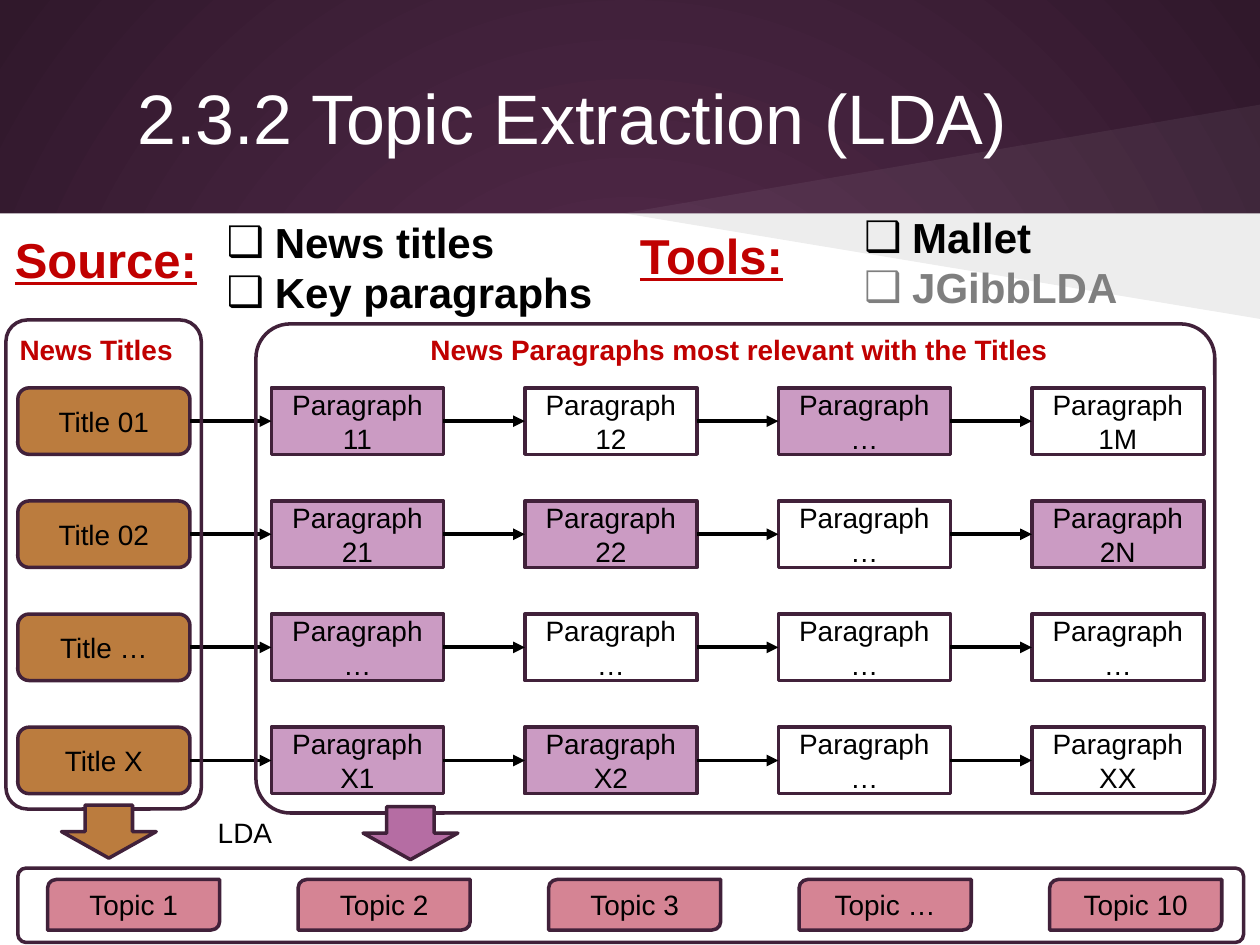
from lxml import etree
from pptx import Presentation
from pptx.dml.color import RGBColor
from pptx.enum import shapes, text
from pptx.oxml import ns
from pptx.util import Cm, Pt

COLORS = {
    "glow": "592D50", "night": "30182B", "outline": "41213A",
    "white": "FFFFFF", "black": "000000", "grey": "7F7F7F", "red": "C00000",
    "title": "BB7C3E", "paragraph": "CB9BC3", "topic": "D58494",
    "arrow": "B56DA3",
}
SHAPE = shapes.MSO_SHAPE
CENTER = text.PP_ALIGN.CENTER

# Grid of titles and paragraphs, in cm
LEFT, TOP, COLUMN_STEP, ROW_STEP = 0.36, 7.82, 5.11, 2.28
BOX_W, BOX_H = 3.47, 1.34
# Each row: title, paragraph suffixes, columns of the relevant paragraphs
ROWS = [
    ("Title 01", ["11", "12", "…", "1M"], {1, 3}),
    ("Title 02", ["21", "22", "…", "2N"], {1, 2, 4}),
    ("Title …", ["…", "…", "…", "…"], {1}),
    ("Title X", ["X1", "X2", "…", "XX"], {1, 2}),
]
TOPICS = ["Topic 1", "Topic 2", "Topic 3", "Topic …", "Topic 10"]


def rgb(name):
    return RGBColor.from_string(COLORS[name])


def add_xml(parent, tag, **attributes):
    return etree.SubElement(parent, ns.qn(tag), **attributes)


def add_bullet(paragraph, color):
    properties = paragraph._p.get_or_add_pPr()
    properties.set("marL", str(Cm(0.97)))
    properties.set("indent", str(-Cm(0.97)))
    add_xml(add_xml(properties, "a:buClr"), "a:srgbClr", val=COLORS[color])
    add_xml(properties, "a:buFont", typeface="Arial")
    add_xml(properties, "a:buChar", char="❑")


def write(frame, content, size=16, color="black", bold=False, underline=False,
          align=None, anchor=text.MSO_ANCHOR.TOP, bullet=False, indent=0):
    """Write content into frame: a string, or a list of (string, color)."""
    frame.word_wrap = True
    frame.vertical_anchor = anchor
    lines = [(content, color)] if isinstance(content, str) else content
    for index, (line, line_color) in enumerate(lines):
        paragraph = frame.add_paragraph() if index else frame.paragraphs[0]
        paragraph.alignment = align
        if bullet:
            add_bullet(paragraph, line_color)
        if indent:
            paragraph._p.get_or_add_pPr().set("indent", str(Cm(indent)))
        run = paragraph.add_run()
        run.text = line
        run.font.name = "Arial"
        run.font.size = Pt(size)
        run.font.bold = bold
        run.font.underline = underline
        run.font.color.rgb = rgb(line_color)


def add_label(slide, box, content, **style):
    label = slide.shapes.add_textbox(*map(Cm, box))
    write(label.text_frame, content, **style)
    return label


def add_box(slide, kind, box, fill=None, content=None, corner=None):
    node = slide.shapes.add_shape(kind, *map(Cm, box))
    node.shadow.inherit = False
    if fill:
        node.fill.solid()
        node.fill.fore_color.rgb = rgb(fill)
    else:
        node.fill.background()
    node.line.color.rgb = rgb("outline")
    node.line.width = Pt(2)
    if corner is not None:
        node.adjustments[0] = corner
    if content:
        write(node.text_frame, content, align=CENTER,
              anchor=text.MSO_ANCHOR.MIDDLE)


def add_arrow(slide, start_x, end_x, y):
    arrow = slide.shapes.add_connector(
        shapes.MSO_CONNECTOR.STRAIGHT, Cm(start_x), Cm(y), Cm(end_x), Cm(y))
    arrow.line.color.rgb = rgb("black")
    arrow.line.width = Pt(2.25)
    properties = arrow._element.spPr
    add_xml(properties.find(ns.qn("a:ln")), "a:tailEnd", type="triangle")
    add_xml(properties, "a:effectLst")


def add_ray(slide, points, color, opacity):
    (start_x, start_y), *others = points
    builder = slide.shapes.build_freeform(Cm(start_x), Cm(start_y))
    builder.add_line_segments([(Cm(x), Cm(y)) for x, y in others])
    ray = builder.convert_to_shape()
    ray.shadow.inherit = False
    ray.line.fill.background()
    ray.fill.solid()
    ray.fill.fore_color.rgb = rgb(color)
    tint = ray._element.spPr.find(f"{ns.qn('a:solidFill')}/{ns.qn('a:srgbClr')}")
    add_xml(tint, "a:alpha", val=str(opacity * 1000))


def add_backdrop(slide):
    # Round gradient behind everything
    fill = slide.background.fill
    fill.gradient()
    for stop, position, color in zip(fill.gradient_stops, (0, 1), ("glow", "night")):
        stop.position = position
        stop.color.rgb = rgb(color)
    gradient = slide._element.find(f".//{ns.qn('a:gradFill')}")
    gradient.remove(gradient.find(ns.qn("a:lin")))
    circle = add_xml(gradient, "a:path", path="circle")
    add_xml(circle, "a:fillToRect", l="50000", t="50000", r="50000", b="50000")

    # White page and the two rays that meet at its upper edge
    page = slide.shapes.add_shape(SHAPE.RECTANGLE, 0, Cm(4.3), Cm(25.4), Cm(14.75))
    page.shadow.inherit = False
    page.fill.solid()
    page.fill.fore_color.rgb = rgb("white")
    page.line.fill.background()
    for edge_y, color, opacity in ((2.11, "white", 6), (6.43, "black", 7)):
        add_ray(slide, [(25.4, 4.3), (12.57, 4.3), (25.4, edge_y)], color, opacity)


def add_headings(slide):
    heading = add_label(slide, (1.68, 0.76, 23.72, 3.18),
                        "2.3.2 Topic Extraction (LDA)", size=40, color="white",
                        anchor=text.MSO_ANCHOR.MIDDLE, indent=0.84)
    heading.text_frame.margin_top = heading.text_frame.margin_bottom = Cm(0.25)
    for box, name in (((0.05, 4.5, 4.37, 1.45), "Source:"),
                      ((12.65, 4.42, 4.37, 1.45), "Tools:")):
        add_label(slide, box, name, size=28, color="red", bold=True, underline=True)
    sources = [("News titles", "black"), ("Key paragraphs", "black")]
    tools = [("Mallet", "black"), ("JGibbLDA", "grey")]
    for box, items in (((4.32, 4.24, 8.56, 2.31), sources),
                       ((17.17, 4.14, 7.44, 2.31), tools)):
        add_label(slide, box, items, size=24, bold=True, bullet=True)


def add_grid(slide):
    for row, (title, suffixes, relevant) in enumerate(ROWS):
        y = TOP + row * ROW_STEP
        add_box(slide, SHAPE.ROUNDED_RECTANGLE, (LEFT, y, BOX_W, BOX_H),
                "title", title, corner=0.17)
        for column, suffix in enumerate(suffixes, start=1):
            x = LEFT + column * COLUMN_STEP
            add_box(slide, SHAPE.RECTANGLE, (x, y, BOX_W, BOX_H),
                    "paragraph" if column in relevant else None,
                    f"Paragraph {suffix}")
            add_arrow(slide, x - COLUMN_STEP + BOX_W, x, y + BOX_H / 2)

    # Frames and captions of the two groups
    for box, corner in (((0.12, 6.45, 3.94, 9.86), 0.11),
                        ((5.16, 6.53, 19.33, 9.86), 0.07)):
        add_box(slide, SHAPE.ROUNDED_RECTANGLE, box, corner=corner)
    for box, caption in (
            ((0.05, 6.58, 3.78, 0.94), "News Titles"),
            ((7.85, 6.58, 14.1, 0.94), "News Paragraphs most relevant with the Titles")):
        add_label(slide, box, caption, color="red", bold=True, align=CENTER)


def add_topics(slide):
    for x, y, fill in ((1.24, 16.23, "title"), (7.32, 16.26, "arrow")):
        add_box(slide, SHAPE.DOWN_ARROW, (x, y, 1.91, 1.07), fill)
    add_label(slide, (4.14, 16.31, 1.68, 0.94), "LDA")
    add_box(slide, SHAPE.ROUNDED_RECTANGLE, (0.36, 17.5, 24.71, 1.5), corner=0.11)
    for index, topic in enumerate(TOPICS):
        add_box(slide, SHAPE.ROUND_2_DIAG_RECTANGLE,
                (0.96 + index * 5.05, 17.73, BOX_W, 1.02), "topic", topic, corner=0.17)


def main():
    deck = Presentation()
    deck.slide_width, deck.slide_height = Cm(25.4), Cm(19.05)
    slide = deck.slides.add_slide(deck.slide_layouts[6])
    add_backdrop(slide)
    add_headings(slide)
    add_grid(slide)
    add_topics(slide)
    deck.save("out.pptx")


if __name__ == "__main__":
    main()
